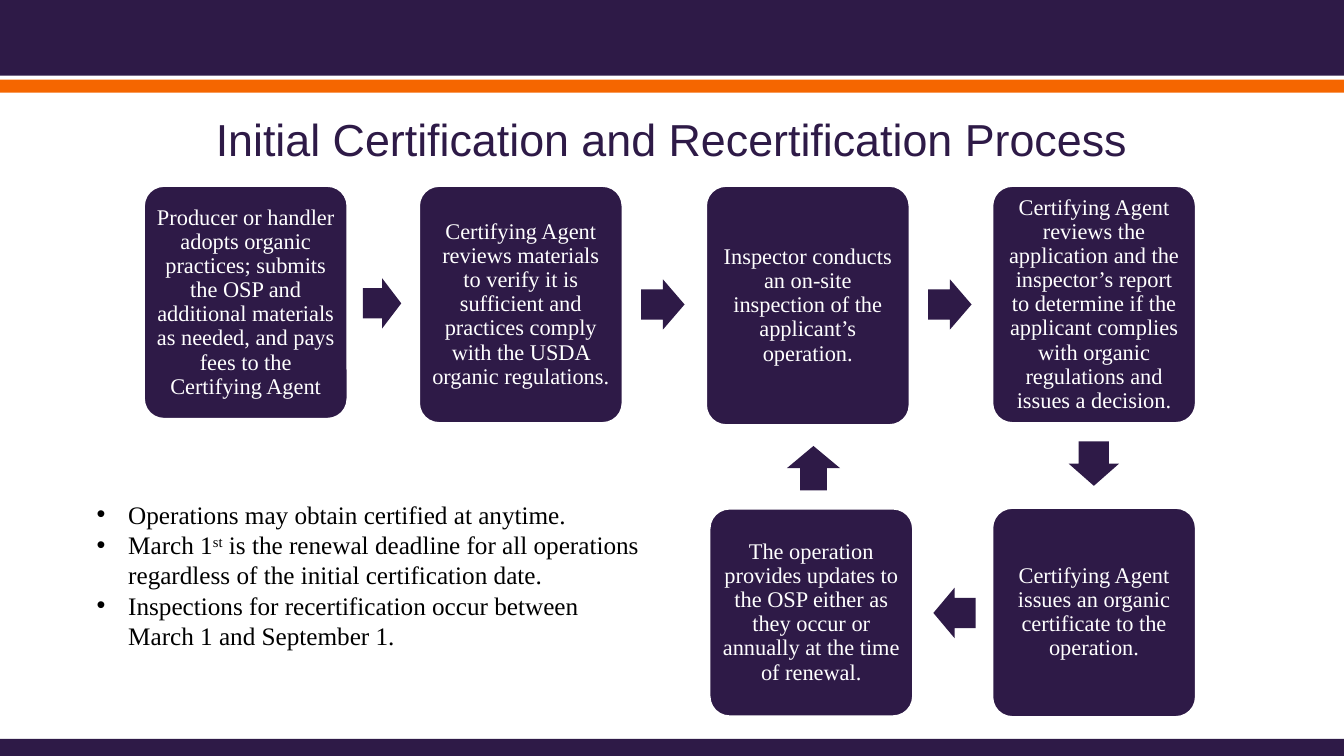
from dataclasses import dataclass

from lxml.etree import SubElement
from pptx import Presentation
from pptx.dml.color import RGBColor
from pptx.enum.shapes import MSO_SHAPE
from pptx.enum.text import MSO_ANCHOR, PP_ALIGN
from pptx.oxml.ns import qn
from pptx.shapes.autoshape import Shape
from pptx.slide import Slide
from pptx.util import Pt

PURPLE = RGBColor(0x2E, 0x1A, 0x47)
ORANGE = RGBColor(0xF5, 0x66, 0x00)
WHITE = RGBColor(0xFF, 0xFF, 0xFF)
BLACK = RGBColor(0, 0, 0)
SERIF = "Times New Roman"
WIDE, HIGH = 960, 540
STEP_WIDTH = 146
STEP_TOP = 132.5


@dataclass(frozen=True)
class Frame:
    left: float
    top: float
    width: float
    height: float

    def points(self) -> tuple[Pt, Pt, Pt, Pt]:
        return Pt(self.left), Pt(self.top), Pt(self.width), Pt(self.height)


@dataclass(frozen=True)
class Bar:
    top: float
    height: float
    color: RGBColor


@dataclass(frozen=True)
class Step:
    left: float
    top: float
    height: float
    text: str


@dataclass(frozen=True)
class Arrow:
    frame: Frame
    turn: int = 0
    shaft: float = 0.6


BARS = [Bar(0, 54, PURPLE), Bar(56.9, 9.3, ORANGE), Bar(527.8, 12.2, PURPLE)]

STEPS = [
    Step(102.5, STEP_TOP, 167, "Producer or handler adopts organic practices; submits the OSP "
         "and additional materials as needed, and pays fees to the Certifying Agent"),
    Step(299, STEP_TOP, 170, "Certifying Agent reviews materials to verify it is sufficient "
         "and practices comply with the USDA organic regulations."),
    Step(504, STEP_TOP, 171.5, "Inspector conducts an on-site inspection of the "
         "applicant’s operation."),
    Step(708.5, STEP_TOP, 170, "Certifying Agent reviews the application and the inspector’s "
         "report to determine if the applicant complies with organic regulations "
         "and issues a decision."),
    Step(708.5, 362.5, 150, "Certifying Agent issues an organic certificate to the operation."),
    Step(506.5, 363, 149, "The operation provides updates to the OSP either as they occur "
         "or annually at the time of renewal."),
]

ARROWS = [
    Arrow(Frame(259.2, 198.7, 27.4, 36)),
    Arrow(Frame(458, 199.5, 31, 36)),
    Arrow(Frame(663, 199.5, 31, 36)),
    Arrow(Frame(765.5, 313.2, 31.7, 36), 90),
    Arrow(Frame(666.7, 419.8, 30.2, 36), 180),
    Arrow(Frame(565.2, 315.4, 31.7, 38), 270, 0.5),
]

# Each note is a list of (text, raised) pieces.
NOTES = [
    [("Operations may obtain certified at anytime.", False)],
    [("March 1", False), ("st", True),
     (" is the renewal deadline for all operations regardless of the "
      "initial certification date.", False)],
    [("Inspections for recertification occur between March 1 and September 1.", False)],
]


def add_solid(slide: Slide, kind: MSO_SHAPE, frame: Frame, color: RGBColor) -> Shape:
    """Add a filled shape without outline or shadow."""
    shape = slide.shapes.add_shape(kind, *frame.points())
    shape.shadow.inherit = False
    shape.fill.solid()
    shape.fill.fore_color.rgb = color
    shape.line.fill.background()
    return shape


def set_font(para, name: str, size: float, color: RGBColor) -> None:
    para.font.name = name
    para.font.size = Pt(size)
    para.font.color.rgb = color


def add_step(slide: Slide, step: Step) -> None:
    frame = Frame(step.left, step.top, STEP_WIDTH, step.height)
    box = add_solid(slide, MSO_SHAPE.ROUNDED_RECTANGLE, frame, PURPLE)
    box.adjustments[0] = 0.1
    box.line.color.rgb = WHITE
    box.line.width = Pt(2)
    text = box.text_frame
    text.word_wrap = True
    text.vertical_anchor = MSO_ANCHOR.MIDDLE
    text.margin_left = text.margin_right = Pt(4.8)
    text.margin_top = text.margin_bottom = Pt(4.8)
    para = text.paragraphs[0]
    para.text = step.text
    para.alignment = PP_ALIGN.CENTER
    para.line_spacing = 0.9
    set_font(para, SERIF, 16, WHITE)


def add_arrow(slide: Slide, arrow: Arrow) -> None:
    shape = add_solid(slide, MSO_SHAPE.RIGHT_ARROW, arrow.frame, PURPLE)
    shape.adjustments[0] = arrow.shaft
    shape.adjustments[1] = 0.5
    shape.rotation = arrow.turn


def add_title(slide: Slide) -> None:
    text = slide.shapes.add_textbox(*Frame(24, 72, 912, 54).points()).text_frame
    text.word_wrap = True
    text.vertical_anchor = MSO_ANCHOR.MIDDLE
    para = text.paragraphs[0]
    para.text = "Initial Certification and Recertification Process"
    para.alignment = PP_ALIGN.CENTER
    set_font(para, "Arial", 32, PURPLE)


def add_bullet(para) -> None:
    props = para._p.get_or_add_pPr()
    props.set("marL", str(Pt(22.5)))
    props.set("indent", str(-Pt(22.5)))
    SubElement(props, qn("a:buFont"), typeface="Arial")
    SubElement(props, qn("a:buChar"), char="•")


def add_notes(slide: Slide) -> None:
    """Add the bulleted deadlines beside the lower steps."""
    text = slide.shapes.add_textbox(*Frame(62, 353, 408, 117).points()).text_frame
    text.word_wrap = True
    for index, note in enumerate(NOTES):
        para = text.add_paragraph() if index else text.paragraphs[0]
        add_bullet(para)
        set_font(para, SERIF, 18, BLACK)
        for words, raised in note:
            run = para.add_run()
            run.text = words
            if raised:
                run.font._element.set("baseline", "30000")


def main() -> None:
    deck = Presentation()
    deck.slide_width, deck.slide_height = Pt(WIDE), Pt(HIGH)
    slide = deck.slides.add_slide(deck.slide_layouts[6])
    for bar in BARS:
        add_solid(slide, MSO_SHAPE.RECTANGLE, Frame(0, bar.top, WIDE, bar.height), bar.color)
    add_title(slide)
    for step in STEPS:
        add_step(slide, step)
    for arrow in ARROWS:
        add_arrow(slide, arrow)
    add_notes(slide)
    deck.save("out.pptx")


if __name__ == "__main__":
    main()
